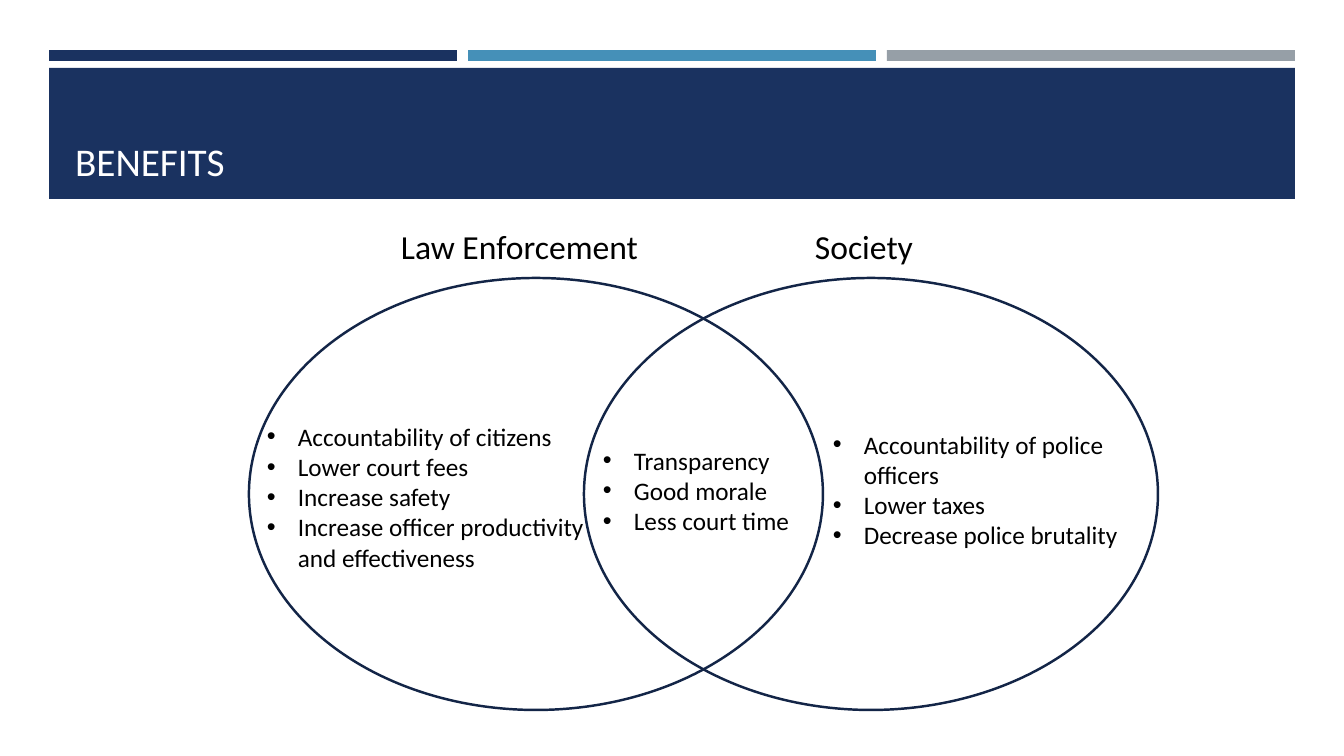
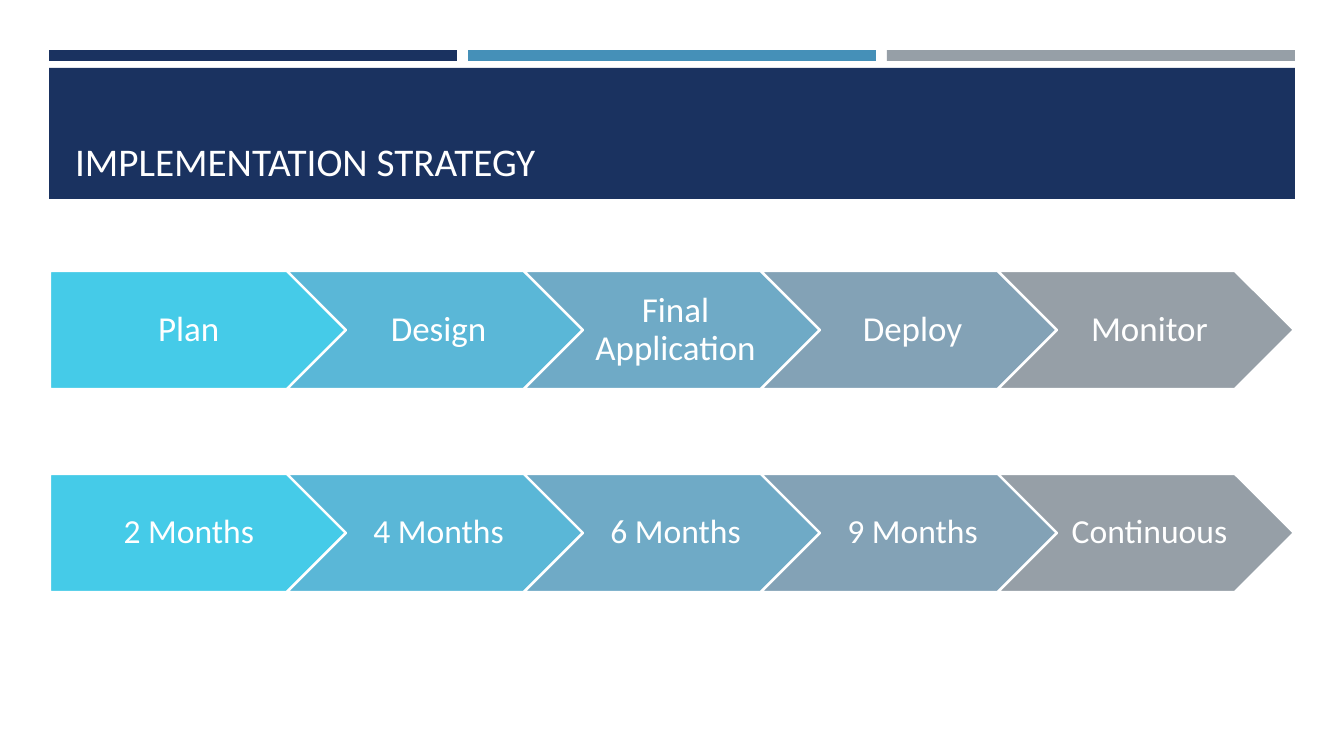
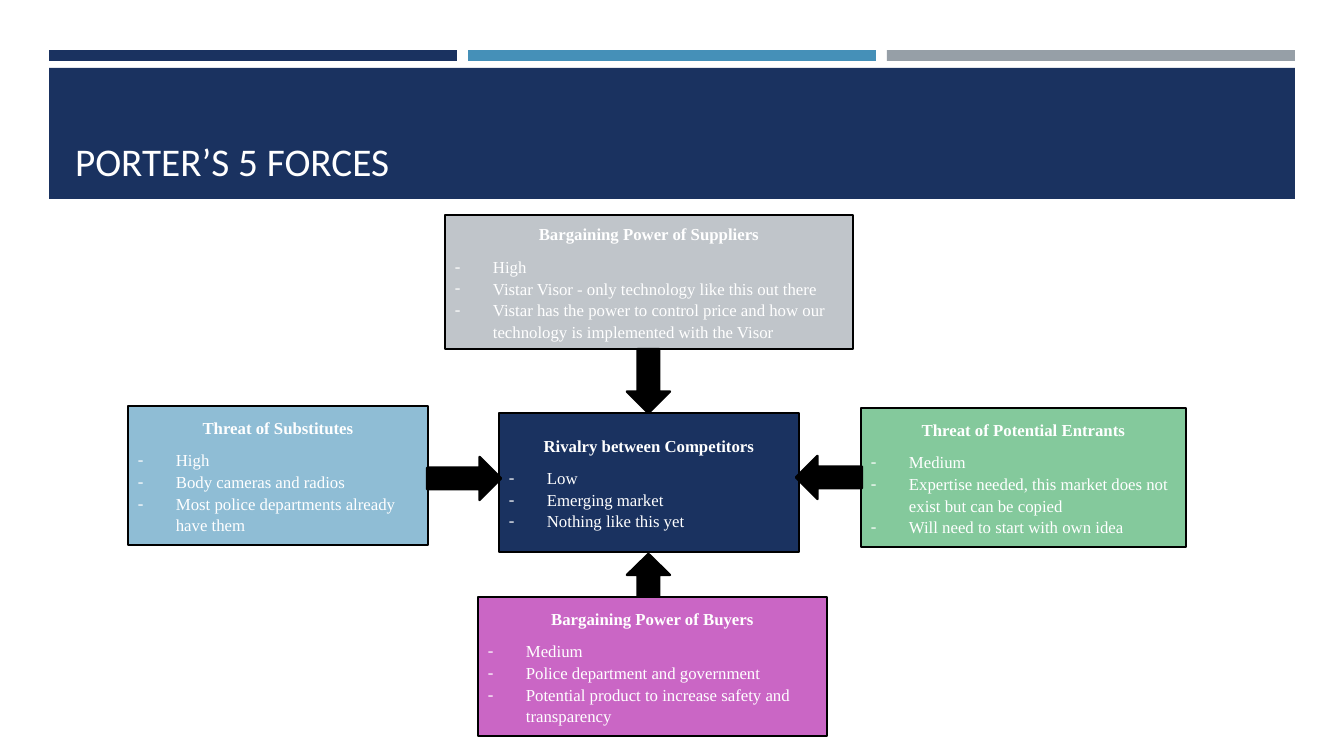
from lxml import etree
from pptx import Presentation
from pptx import util as u
from pptx.dml.color import RGBColor
from pptx.enum import shapes, text
from pptx.oxml import ns

NAVY, BLUE, GREY = "1A3260", "4590B8", "969FA7"
WHITE, BLACK, EDGE = "FFFFFF", "000000", "132547"
SANS, SERIF = "Calibri", "Times New Roman"
KIND = shapes.MSO_SHAPE
MID = text.MSO_ANCHOR.MIDDLE
LEFT, CENTER = text.PP_ALIGN.LEFT, text.PP_ALIGN.CENTER


def px(n):
    """Turn pixels into EMU."""
    return u.Inches(n / 100.8)


def paint(part, color):
    """Give a fill, line or font a solid hex colour."""
    if hasattr(part, "solid"):
        part.solid()
        part = part.fore_color
    else:
        part = part.color
    part.rgb = RGBColor.from_string(color)


def shape(slide, kind, box, fill=None, line=None):
    """Add a preset shape in a box."""
    item = slide.shapes.add_shape(kind, *map(px, box))
    item.shadow.inherit = False
    if fill:
        paint(item.fill, fill)
    else:
        item.fill.background()
    if line:
        paint(item.line, line)
        item.line.width = u.Pt(1.75)
    else:
        item.line.fill.background()
    return item


def write(para, words, size, color, face=SANS, bold=False, align=LEFT):
    """Add one formatted run to a paragraph."""
    para.alignment = align
    run = para.add_run()
    run.text = words
    run.font.size, run.font.name, run.font.bold = u.Pt(size), face, bold
    paint(run.font, color)


def bullet(para, mark, indent):
    """Hang a bullet mark in front of a paragraph."""
    props = para._p.get_or_add_pPr()
    props.set("marL", str(px(indent)))
    props.set("indent", str(-px(indent)))
    etree.SubElement(props, ns.qn("a:buFont")).set("typeface", "Arial" if mark == "•" else SERIF)
    etree.SubElement(props, ns.qn("a:buChar")).set("char", mark)


def paras(frame, count):
    """Return the given number of paragraphs of a frame."""
    return [frame.paragraphs[0]] + [frame.add_paragraph() for _ in range(count - 1)]


def note(slide, box, lines, size, mark=None):
    """Add a text box with plain or bulleted lines."""
    frame = slide.shapes.add_textbox(*map(px, box)).text_frame
    frame.word_wrap = True
    frame.auto_size = text.MSO_AUTO_SIZE.SHAPE_TO_FIT_TEXT
    for para, words in zip(paras(frame, len(lines)), lines):
        write(para, words, size, BLACK)
        if mark:
            bullet(para, mark, 31)


def bands(slide, layout):
    """Draw the header bands and hand them to the layout."""
    items = [shape(slide, KIND.RECTANGLE, (49 + 419 * i, 50, 408, 11), color)
             for i, color in enumerate((NAVY, BLUE, GREY))]
    items.append(shape(slide, KIND.RECTANGLE, (49, 68, 1246, 131), NAVY))
    for item in items:
        layout.shapes.element.append(item._element)


def start(deck, words):
    """Add a slide with a formatted title."""
    slide = deck.slides.add_slide(deck.slide_layouts[5])
    title = slide.shapes.title
    title.left, title.top, title.width, title.height = map(px, (65, 78, 1215, 111))
    frame = title.text_frame
    frame.auto_size = text.MSO_AUTO_SIZE.NONE
    frame.vertical_anchor = text.MSO_ANCHOR.BOTTOM
    write(frame.paragraphs[0], words, 28, WHITE)
    return slide


def venn(slide, box):
    """Draw two overlapping ellipses with headings and lists."""
    x, y, w, h = box
    for dx in (0, 335):
        shape(slide, KIND.OVAL, (x + dx, y, w, h), line=EDGE)
    for dx, wide, words in ((142, 403, "Law Enforcement"), (556, 331, "Society")):
        note(slide, (x + dx, y - 57, wide, 50), [words], 24)
    lists = (
        (8, 138, 349, ["Accountability of citizens", "Lower court fees", "Increase safety",
                       "Increase officer productivity and effectiveness"]),
        (344, 162, 296, ["Transparency", "Good morale", "Less court time"]),
        (574, 146, 335, ["Accountability of police officers", "Lower taxes",
                         "Decrease police brutality"]),
    )
    for dx, dy, wide, lines in lists:
        note(slide, (x + dx, y + dy, wide, 30 * len(lines)), lines, 18, "•")


def steps(slide, box, words, size):
    """Draw a row of linked arrows, one per step."""
    x, y, w, h = box
    colors = ("45CBE8", "5AB7D7", "6FAAC6", "83A2B6", GREY)
    for i, (color, word) in enumerate(zip(colors, words)):
        kind = KIND.CHEVRON if i else KIND.PENTAGON
        item = shape(slide, kind, (x + 237 * i, y, w, h), color, WHITE)
        frame = item.text_frame
        frame.word_wrap = True
        frame.vertical_anchor = MID
        frame.margin_left, frame.margin_right = px(11 if i else 15), px(4)
        frame.margin_top = frame.margin_bottom = px(7)
        para = frame.paragraphs[0]
        para.line_spacing = 0.9
        write(para, word, size, WHITE, align=CENTER)


def force(slide, box, color, head, lines):
    """Draw one force as a box with a heading and a dashed list."""
    frame = shape(slide, KIND.RECTANGLE, box, color, BLACK).text_frame
    frame.word_wrap = True
    frame.vertical_anchor = MID
    top, *rest = items = paras(frame, len(lines) + 1)
    for para in items:
        para.line_spacing = 1.07
        para.space_after = u.Pt(8 if para in (top, rest[-1]) else 0)
    write(top, head, 12, WHITE, SERIF, True, CENTER)
    for para, words in zip(rest, lines):
        write(para, words, 12, WHITE, SERIF)
        bullet(para, "-", 38)


def forces(slide):
    """Draw the five forces and the arrows to the centre."""
    cards = (
        ((445, 215, 408, 134), "C0C5CA", "Bargaining Power of Suppliers",
         ["High", "Vistar Visor - only technology like this out there",
          "Vistar has the power to control price and how our technology is "
          "implemented with the Visor"]),
        ((499, 413, 300, 139), NAVY, "Rivalry between Competitors",
         ["Low", "Emerging market", "Nothing like this yet"]),
        ((128, 406, 300, 139), "8FBDD5", "Threat of Substitutes",
         ["High", "Body cameras and radios", "Most police departments already have them"]),
        ((478, 597, 349, 139), "CA66C5", "Bargaining Power of Buyers",
         ["Medium", "Police department and government",
          "Potential product to increase safety and transparency"]),
        ((861, 408, 325, 139), "84C99C", "Threat of Potential Entrants",
         ["Medium", "Expertise needed, this market does not exist but can be copied",
          "Will need to start with own idea"]),
    )
    for card in cards:
        force(slide, *card)
    arrows = (
        (KIND.DOWN_ARROW, (627, 349, 43, 64)),
        (KIND.RIGHT_ARROW, (427, 457, 74, 43)),
        (KIND.UP_ARROW, (627, 554, 43, 42)),
        (KIND.LEFT_ARROW, (796, 456, 66, 43)),
    )
    for kind, box in arrows:
        shape(slide, kind, box, BLACK, BLACK)


def main():
    """Build and save the deck."""
    deck = Presentation()
    deck.slide_width, deck.slide_height = px(1344), px(756)
    gains = start(deck, "BENEFITS")
    bands(gains, deck.slide_layouts[5])
    venn(gains, (249, 278, 574, 432))
    plan = start(deck, "IMPLEMENTATION STRATEGY")
    steps(plan, (50, 271, 296, 118),
          ("Plan", "Design", "Final Application", "Deploy", "Monitor"), 25)
    steps(plan, (50, 474, 296, 118),
          ("2 Months", "4 Months", "6 Months", "9 Months", "Continuous"), 24)
    forces(start(deck, "PORTER’S 5 FORCES"))
    deck.save("out.pptx")


if __name__ == "__main__":
    main()
